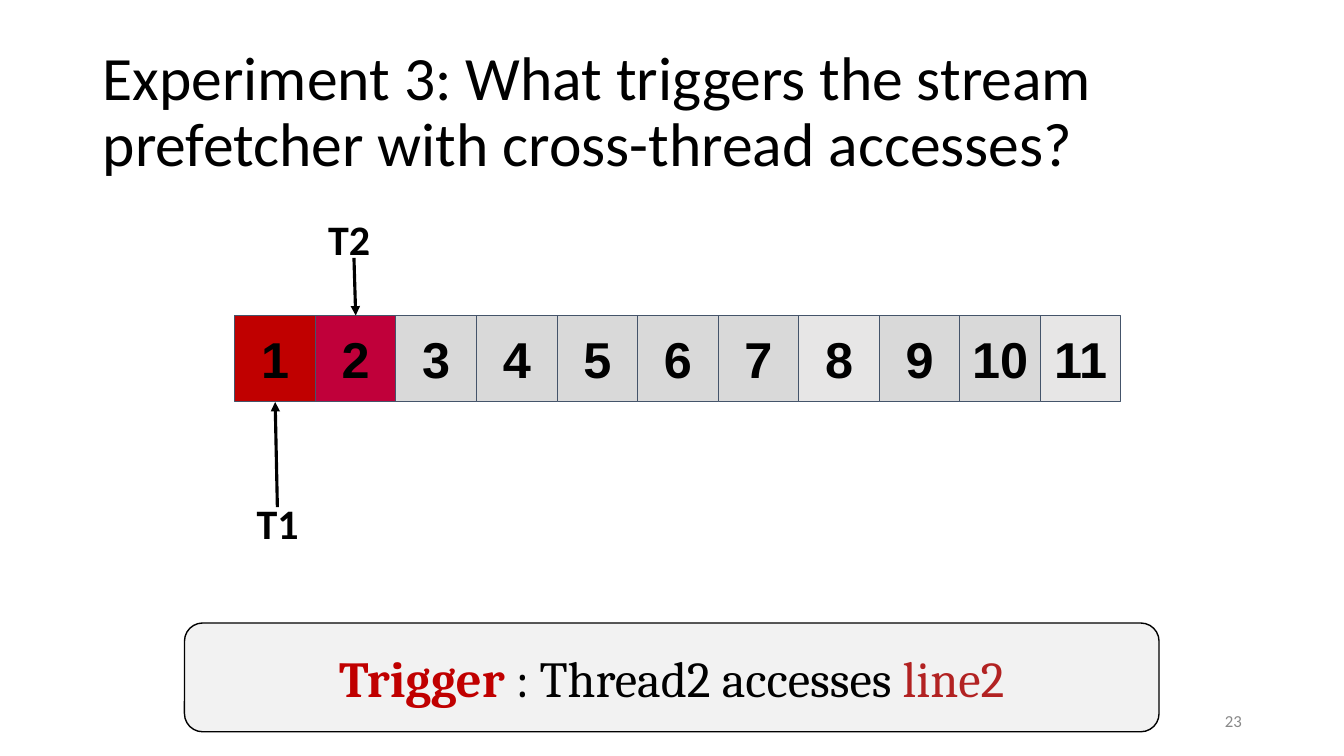
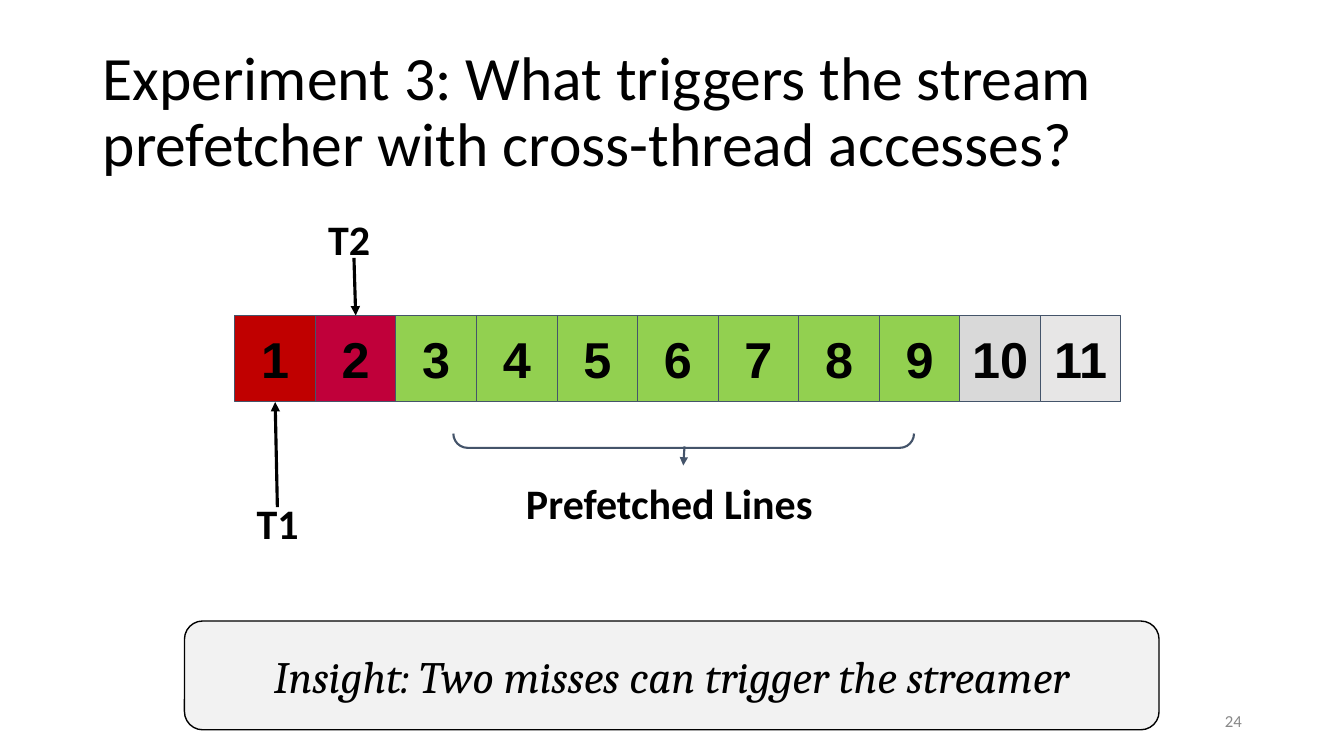
from lxml.etree import SubElement
from pptx import Presentation
from pptx.dml.color import RGBColor
from pptx.enum.shapes import MSO_CONNECTOR, MSO_SHAPE
from pptx.enum.text import MSO_ANCHOR, MSO_AUTO_SIZE, PP_ALIGN
from pptx.oxml.ns import qn
from pptx.util import Cm, Pt

BLACK, SLATE, GREY, LIGHT = "000000", "44546A", "D9D9D9", "E7E6E6"
RED, CRIMSON, GREEN, BRICK = "C00000", "C0003A", "92D050", "B22222"
PANEL, FOOTER = "F2F2F2", "888888"

TITLE = "Experiment 3: What triggers the stream prefetcher with cross-thread accesses?"
TITLE_FONT = {"name": "Calibri", "size": Pt(44), "bold": False}
CELL_FONT = {"name": "Arial", "size": Pt(36), "bold": True}
LABEL_FONT = {"name": "Calibri", "size": Pt(30), "bold": True}
NUMBER_FONT = {"name": "Calibri", "size": Pt(12)}
TRIGGER_FONT = {"name": "Cambria", "size": Pt(36)}
INSIGHT_FONT = {"name": "Cambria", "size": Pt(32), "italic": True}

ROW_LEFT, ROW_TOP, CELL_W, CELL_H = 5.92, 7.95, 2.03, 2.18
CELLS_BEFORE = [RED, CRIMSON] + [GREY] * 5 + [LIGHT, GREY, GREY, LIGHT]
CELLS_AFTER = [RED, CRIMSON] + [GREEN] * 7 + [GREY, LIGHT]


def rgb(value):
    return RGBColor.from_string(value)


def box(left, top, width, height):
    return Cm(left), Cm(top), Cm(width), Cm(height)


def write(tf, runs, align=PP_ALIGN.CENTER, anchor=MSO_ANCHOR.MIDDLE, inset_y=0.13):
    frame = {
        "word_wrap": True,
        "auto_size": MSO_AUTO_SIZE.NONE,
        "vertical_anchor": anchor,
        "margin_left": Cm(0.25),
        "margin_right": Cm(0.25),
        "margin_top": Cm(inset_y),
        "margin_bottom": Cm(inset_y),
    }
    for key, value in frame.items():
        setattr(tf, key, value)
    p = tf.paragraphs[0]
    p.alignment = align
    for text, font, color in runs:
        r = p.add_run()
        r.text = text
        for key, value in font.items():
            setattr(r.font, key, value)
        r.font.color.rgb = rgb(color)
    return p


def add_title(s):
    sp = s.shapes.title
    sp.left, sp.top, sp.width, sp.height = box(2.34, 1.02, 29.21, 3.68)
    p = write(sp.text_frame, [(TITLE, TITLE_FONT, BLACK)], PP_ALIGN.LEFT)
    p.line_spacing = 0.9


def add_number(s, number):
    sp = s.shapes.add_textbox(*box(23.93, 17.65, 7.62, 1.02))
    write(sp.text_frame, [(str(number), NUMBER_FONT, FOOTER)], PP_ALIGN.RIGHT)


def add_label(s, text, *place):
    sp = s.shapes.add_textbox(*box(*place))
    write(sp.text_frame, [(text, LABEL_FONT, BLACK)], anchor=MSO_ANCHOR.TOP, inset_y=0.25)


def add_block(s, kind, place, fill, line, weight):
    sp = s.shapes.add_shape(kind, *box(*place))
    sp.shadow.inherit = False
    if fill:
        sp.fill.solid()
        sp.fill.fore_color.rgb = rgb(fill)
    else:
        sp.fill.background()
    sp.line.color.rgb = rgb(line)
    sp.line.width = Pt(weight)
    return sp


def add_cells(s, colors):
    cells = []
    for i, color in enumerate(colors):
        place = (ROW_LEFT + i * CELL_W, ROW_TOP, CELL_W, CELL_H)
        sp = add_block(s, MSO_SHAPE.RECTANGLE, place, color, SLATE, 0.75)
        write(sp.text_frame, [(str(i + 1), CELL_FONT, BLACK)], inset_y=0.25)
        cells.append(sp)
    return cells


def add_arrow(s, start, end, color, weight):
    points = [Cm(v) for v in (*start, *end)]
    arrow = s.shapes.add_connector(MSO_CONNECTOR.STRAIGHT, *points)
    arrow.line.color.rgb = rgb(color)
    arrow.line.width = Pt(weight)
    SubElement(arrow.get_or_add_ln(), qn("a:tailEnd"), type="triangle")
    SubElement(arrow.element.spPr, qn("a:effectLst"))
    return arrow


def add_thread(s, text, label_at, start, cell, side):
    add_label(s, text, *label_at, 2.72, 1.88)
    arrow = add_arrow(s, start, start, BLACK, 2.25)
    arrow.end_connect(cell, side)


def add_prefetch_bracket(s):
    sp = add_block(s, MSO_SHAPE.LEFT_BRACKET, (17.05, 5.3, 0.36, 11.61), None, SLATE, 1.5)
    sp.adjustments[0] = 1
    sp.rotation = 270
    add_arrow(s, (17.25, 11.25), (17.22, 11.73), SLATE, 1.5)
    add_label(s, "Prefetched Lines", 12.88, 11.79, 7.98, 1.22)


def add_note(s, top, runs):
    sp = add_block(s, MSO_SHAPE.ROUNDED_RECTANGLE, (4.65, top, 24.56, 2.74), PANEL, BLACK, 1)
    write(sp.text_frame, runs)


def add_experiment(prs, number, colors, note_top, note):
    s = prs.slides.add_slide(prs.slide_layouts[5])
    add_title(s)
    add_number(s, number)
    cells = add_cells(s, colors)
    add_thread(s, "T1", (5.64, 12.29), (6.99, 12.78), cells[0], 2)
    add_thread(s, "T2", (7.44, 5.13), (8.92, 6.5), cells[1], 0)
    add_note(s, note_top, note)
    return s


def main():
    prs = Presentation()
    prs.slide_width, prs.slide_height = Cm(33.87), Cm(19.05)
    trigger = [
        ("Trigger ", {**TRIGGER_FONT, "bold": True}, RED),
        (": Thread2 accesses ", TRIGGER_FONT, BLACK),
        ("line2", TRIGGER_FONT, BRICK),
    ]
    insight = [("Insight: Two misses can trigger the streamer", INSIGHT_FONT, BLACK)]
    add_experiment(prs, 23, CELLS_BEFORE, 15.7, trigger)
    s = add_experiment(prs, 24, CELLS_AFTER, 15.65, insight)
    add_prefetch_bracket(s)
    prs.save("out.pptx")


if __name__ == "__main__":
    main()
